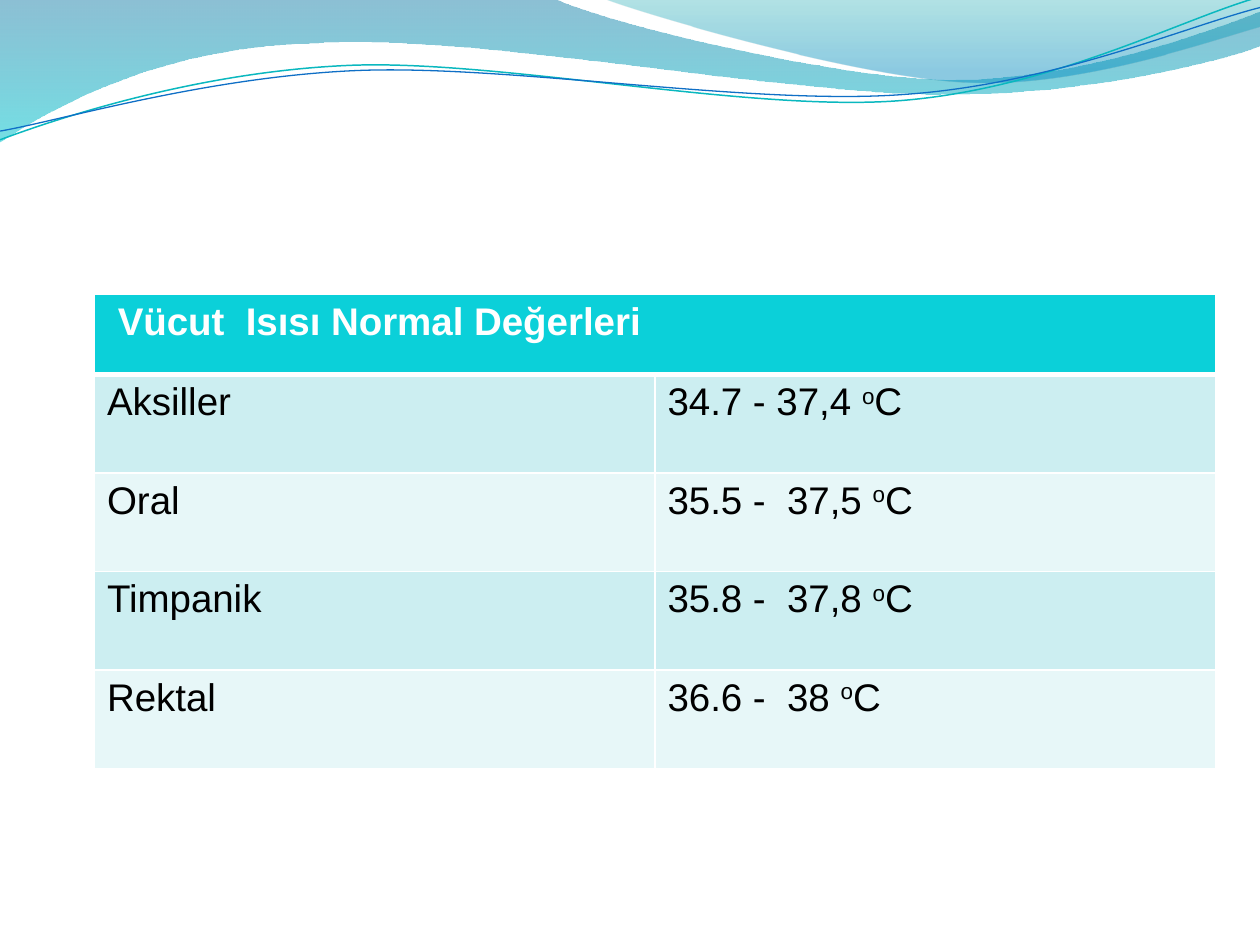
from lxml import etree
from pptx import Presentation
from pptx.dml.color import RGBColor
from pptx.enum import text
from pptx.oxml import ns
from pptx.util import Pt

SLIDE_W, SLIDE_H = 720, 540

# Wave outlines in points: start, then steps of one point (line) or three (curve)
BACK_WAVE = [
    (0, 0), [(316.8, -0.7)],
    [(342.7, 12.2), (478.1, 45.4), (545.8, 45.4)],
    [(614.2, 45.4), (689.8, 18.7), (720, 6.5)],
    [(720.7, 25.9)],
    [(707.8, 31.7), (626.4, 54.7), (537.1, 54)],
    [(446.4, 54), (275, 20.2), (185, 24.5)],
    [(92.9, 25.9), (33.1, 59.8), (-0.7, 81.4)],
]
FRONT_WAVE = [
    (344.9, -0.7),
    [(366.5, 7.9), (491, 44.6), (553.7, 46.8)],
    [(616.3, 49.7), (691.9, 23), (720, 15.1)],
    [(720, 0)],
]
TEAL_LINE = [
    (0, 79.9),
    [(34.6, 67), (113.8, 41), (199.4, 37.4)],
    [(284.4, 33.8), (427, 64.1), (513.4, 57.6)],
    [(599.8, 51.1), (675.4, 10.8), (718.6, -1.4)],
]
BLUE_LINE = [
    (0, 74.9),
    [(33.8, 69.1), (118.1, 43.9), (203.8, 40.3)],
    [(290.2, 36.7), (429.8, 60.5), (516.2, 54)],
    [(601.9, 48.2), (677.5, 15.1), (720, 4.3)],
]

HEADING = " Vücut  Isısı Normal Değerleri"
READINGS = [
    ("Aksiller", "34.7 - 37,4 "),
    ("Oral", "35.5 -  37,5 "),
    ("Timpanik", "35.8 -  37,8 "),
    ("Rektal", "36.6 -  38 "),
]
BAND_FILLS = ("CCEEF1", "E7F7F8")


def color(hex_code):
    return RGBColor.from_string(hex_code)


def add_outline(slide, left, top, outline, close):
    start, *steps = outline
    corners = [(Pt(left + x), Pt(top + y)) for x, y in [start, *sum(steps, [])]]
    builder = slide.shapes.build_freeform(*corners[0])
    builder.add_line_segments(corners[1:], close=close)
    shape = builder.convert_to_shape()
    shape.shadow.inherit = False

    # Join each three-point step into one cubic curve
    segments = iter(list(shape._element.spPr.iter(ns.qn("a:lnTo"))))
    for step in steps:
        first, *others = [next(segments) for _ in step]
        if others:
            first.tag = ns.qn("a:cubicBezTo")
        for other in others:
            first.append(other[0])
            other.getparent().remove(other)
    return shape


def add_wave(slide, left, top, outline, stops):
    """Stops are (position, colour, opacity in percent), from top to bottom."""
    wave = add_outline(slide, left, top, outline, True)
    wave.line.fill.background()
    wave.fill.gradient()
    wave.fill.gradient_angle = 270
    for stop, (position, hex_code, _) in zip(wave.fill.gradient_stops, stops):
        stop.position = position
        stop.color.rgb = color(hex_code)
    tints = wave._element.spPr.iter(ns.qn("a:srgbClr"))
    for tint, (_, _, opacity) in zip(tints, stops):
        etree.SubElement(tint, ns.qn("a:alpha"), val=str(opacity * 1000))


def add_wave_line(slide, left, top, outline, hex_code, width):
    curve = add_outline(slide, left, top, outline, False)
    curve.fill.background()
    curve.line.color.rgb = color(hex_code)
    curve.line.width = Pt(width)


def add_wave_band(slide, left, top):
    add_wave(slide, left, top, BACK_WAVE, [(0, "0074A1", 45), (1, "00C6CF", 55)])
    add_wave(slide, left, top, FRONT_WAVE, [(0, "00A1A9", 30), (0.8, "008BBF", 45)])
    add_wave_line(slide, left, top, TEAL_LINE, "0AB8BF", 0.85)
    add_wave_line(slide, left, top, BLUE_LINE, "0F6FC6", 0.75)


def style_cell(cell, fill, font_color, bold=False, bottom=1):
    # Borders go in ahead of the fill
    properties = cell._tc.get_or_add_tcPr()
    for side, width in (("L", 1), ("R", 1), ("T", 1), ("B", bottom)):
        border = etree.SubElement(properties, ns.qn(f"a:ln{side}"), w=str(Pt(width)))
        paint = etree.SubElement(border, ns.qn("a:solidFill"))
        etree.SubElement(paint, ns.qn("a:srgbClr"), val="FFFFFF")
    cell.fill.solid()
    cell.fill.fore_color.rgb = color(fill)
    font = cell.text_frame.paragraphs[0].font
    font.name, font.size, font.bold = "Arial", Pt(22), bold
    font.color.rgb = color(font_color)


def add_readings_table(slide, left, top, width, heading_height, row_height):
    height = heading_height + row_height * len(READINGS)
    table = slide.shapes.add_table(len(READINGS) + 1, 2, Pt(left), Pt(top),
                                   Pt(width), Pt(height)).table
    for row in table.rows:
        row.height = Pt(row_height)
    table.rows[0].height = Pt(heading_height)

    # Heading across both columns
    heading = table.cell(0, 0)
    heading.merge(table.cell(0, 1))
    heading.text = HEADING
    heading.text_frame.paragraphs[0].alignment = text.PP_ALIGN.JUSTIFY
    for column in (0, 1):
        style_cell(table.cell(0, column), "0BD0D9", "FFFFFF", bold=True, bottom=3)

    # Banded rows: site and temperature range
    for index, (site, temperature) in enumerate(READINGS):
        site_cell, range_cell = table.rows[index + 1].cells
        site_cell.text = site
        paragraph = range_cell.text_frame.paragraphs[0]
        for part in (temperature, "o", "C"):
            run = paragraph.add_run()
            run.text = part
            if part == "o":
                run.font._element.set("baseline", "30000")
        for cell in (site_cell, range_cell):
            style_cell(cell, BAND_FILLS[index % 2], "000000")


def main():
    deck = Presentation()
    deck.slide_width, deck.slide_height = Pt(SLIDE_W), Pt(SLIDE_H)
    slide = deck.slides.add_slide(deck.slide_layouts[6])
    add_wave_band(slide, 0, 0)
    add_readings_table(slide, 54, 168.2, 640.6, 45.9, 56.3)
    deck.save("out.pptx")


if __name__ == "__main__":
    main()
